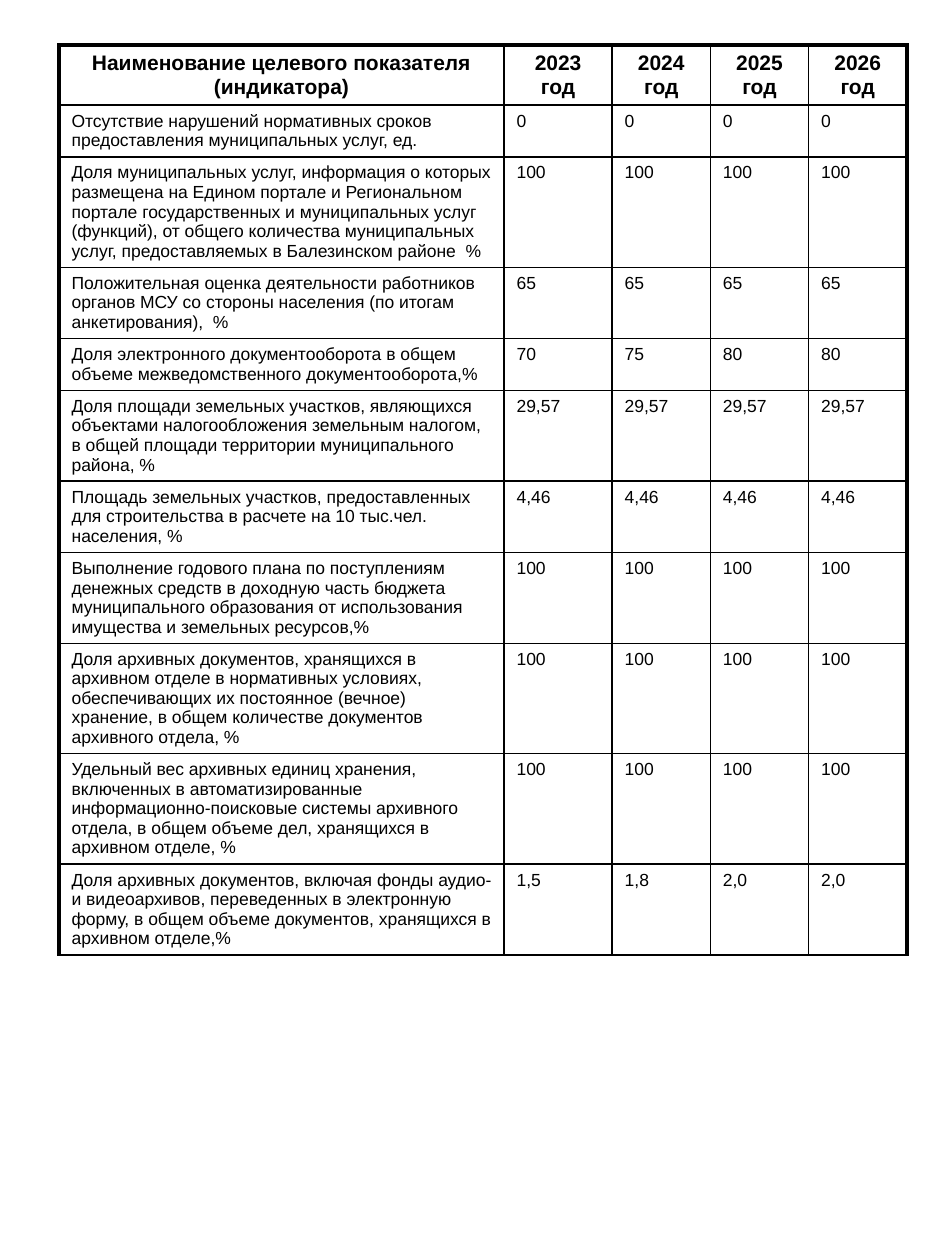
from lxml.etree import SubElement
from pptx import Presentation
from pptx.dml.color import RGBColor
from pptx.enum.text import PP_ALIGN
from pptx.oxml.ns import qn
from pptx.util import Cm, Pt

BLACK = RGBColor(0, 0, 0)
THIN, THICK = Pt(1), Pt(2.25)
COLUMN_WIDTHS = [8.97, 2.18, 1.98, 1.98, 1.98]
HEADER_HEIGHT = 1.21
LINE_HEIGHT, CELL_PADDING = 0.39, 0.26

HEADER = ["Наименование целевого показателя (индикатора)",
          "2023 год", "2024 год", "2025 год", "2026 год"]

# Indicator, number of text lines, values by year
INDICATORS = [
    ("Отсутствие нарушений нормативных сроков предоставления муниципальных услуг, ед.",
     2, ["0"] * 4),
    ("Доля муниципальных услуг, информация о которых размещена на Едином портале и "
     "Региональном портале государственных и муниципальных услуг (функций), от общего "
     "количества муниципальных услуг, предоставляемых в Балезинском районе  %",
     5, ["100"] * 4),
    ("Положительная оценка деятельности работников органов МСУ со стороны населения "
     "(по итогам анкетирования),  %",
     3, ["65"] * 4),
    ("Доля электронного документооборота в общем объеме межведомственного "
     "документооборота,%",
     2, ["70", "75", "80", "80"]),
    ("Доля площади земельных участков, являющихся объектами налогообложения земельным "
     "налогом, в общей площади территории муниципального района, %",
     4, ["29,57"] * 4),
    ("Площадь земельных участков, предоставленных для строительства в расчете на "
     "10 тыс.чел. населения, %",
     3, ["4,46"] * 4),
    ("Выполнение годового плана по поступлениям денежных средств в доходную часть "
     "бюджета муниципального образования от использования имущества и земельных "
     "ресурсов,%",
     4, ["100"] * 4),
    ("Доля архивных документов, хранящихся в архивном отделе в нормативных условиях, "
     "обеспечивающих их постоянное (вечное) хранение, в общем количестве документов "
     "архивного отдела, %",
     5, ["100"] * 4),
    ("Удельный вес архивных единиц хранения, включенных в автоматизированные "
     "информационно-поисковые системы архивного отдела, в общем объеме дел, хранящихся "
     "в архивном отделе, %",
     5, ["100"] * 4),
    ("Доля архивных документов, включая фонды аудио- и видеоархивов, переведенных в "
     "электронную форму, в общем объеме документов, хранящихся в архивном отделе,%",
     4, ["1,5", "1,8", "2,0", "2,0"]),
]


def write_text(cell, text, size=10, bold=False, align=PP_ALIGN.LEFT):
    para = cell.text_frame.paragraphs[0]
    para.alignment = align
    spacing = SubElement(para._p.get_or_add_pPr(), qn("a:spcBef"))
    SubElement(spacing, qn("a:spcPct"), val="20000")
    span = para.add_run()
    span.text = text
    span.font.name = "Arial"
    span.font.size = Pt(size)
    span.font.bold = bold
    span.font.color.rgb = BLACK


def set_borders(cell, **widths):
    """Draw black borders; keywords L, R, T, B in that order."""
    properties = cell._tc.get_or_add_tcPr()
    for side, width in widths.items():
        line = SubElement(properties, qn(f"a:ln{side}"), w=str(width))
        fill = SubElement(line, qn("a:solidFill"))
        SubElement(fill, qn("a:srgbClr"), val=str(BLACK))


def add_indicator_table(slide):
    rows = [HEADER] + [[name, *values] for name, _, values in INDICATORS]
    heights = [HEADER_HEIGHT] + [
        CELL_PADDING + LINE_HEIGHT * lines for _, lines, _ in INDICATORS]
    table = slide.shapes.add_table(
        len(rows), len(HEADER), Cm(1.19), Cm(0.91),
        Cm(sum(COLUMN_WIDTHS)), Cm(sum(heights))).table
    table.first_row = table.horz_banding = False
    for column, width in zip(table.columns, COLUMN_WIDTHS):
        column.width = Cm(width)
    for row, height in zip(table.rows, heights):
        row.height = Cm(height)

    header_format = {"size": 12, "bold": True, "align": PP_ALIGN.CENTER}
    last = len(HEADER) - 1
    for r, texts in enumerate(rows):
        for c, text in enumerate(texts):
            cell = table.cell(r, c)
            write_text(cell, text, **(header_format if r == 0 else {}))
            set_borders(cell,
                        L=THICK if c == 0 else THIN,
                        R=THICK if c == last else THIN,
                        T=THICK if r == 0 else THIN,
                        B=THIN)
            cell.fill.background()


def main():
    deck = Presentation()
    deck.slide_width, deck.slide_height = Cm(19.05), Cm(25.4)
    slide = deck.slides.add_slide(deck.slide_layouts[6])
    add_indicator_table(slide)
    deck.save("out.pptx")


if __name__ == "__main__":
    main()
